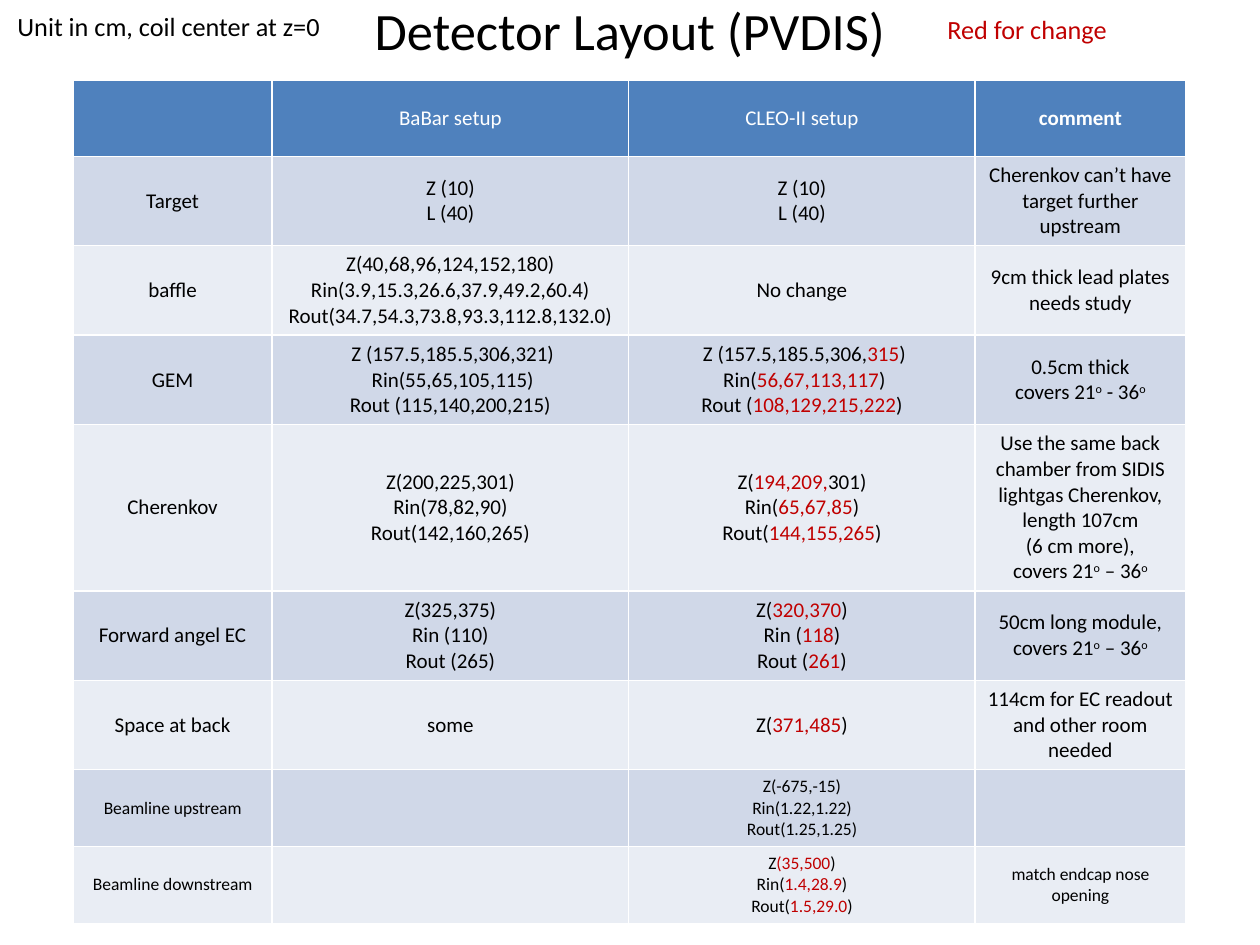
from pptx import Presentation
from pptx.dml.color import RGBColor
from pptx.enum.text import MSO_ANCHOR, PP_ALIGN
from pptx.util import Inches, Pt

FONT = "Calibri"
BLACK = RGBColor(0x00, 0x00, 0x00)
WHITE = RGBColor(0xFF, 0xFF, 0xFF)
RED = RGBColor(0xC0, 0x00, 0x00)
HEADER_FILL = RGBColor(0x4F, 0x81, 0xBD)
BAND_FILLS = (RGBColor(0xE9, 0xED, 0xF4), RGBColor(0xD0, 0xD8, 0xE8))

COLUMN_WIDTHS = (1.58, 2.83, 2.75, 1.67)
HEADER_HEIGHT, ROW_HEIGHT = 0.6, 0.66
CHERENKOV_HEIGHT, BEAMLINE_HEIGHT = 1.22, 0.61

# Text between asterisks is red, text between carets is superscript
HEADER = ("", "BaBar setup", "CLEO-II setup", "comment")
DETECTORS = [
    ("Target", "Z (10)\nL (40)", "Z (10)\nL (40)",
     "Cherenkov can’t have target further upstream"),
    ("baffle",
     "Z(40,68,96,124,152,180)\n"
     "Rin(3.9,15.3,26.6,37.9,49.2,60.4) Rout(34.7,54.3,73.8,93.3,112.8,132.0)",
     "No change", "9cm thick lead plates\nneeds study"),
    ("GEM",
     " Z (157.5,185.5,306,321)\n Rin(55,65,105,115)\nRout (115,140,200,215)",
     " Z (157.5,185.5,306,*315*)\n Rin(*56,67,113,117*)\nRout (*108,129,215,222*)",
     "0.5cm thick\ncovers 21^o^ - 36^o^"),
    ("Cherenkov", "Z(200,225,301)\nRin(78,82,90)\nRout(142,160,265)",
     "Z(*194,209,*301)\nRin(*65,67,85*)\nRout(*144,155,265*)",
     "Use the same back chamber from SIDIS lightgas Cherenkov,\n"
     "length 107cm\n(6 cm more),\ncovers 21^o^ – 36^o^"),
    ("Forward angel EC", "Z(325,375)\nRin (110)\nRout (265)",
     "Z(*320,370*)\nRin (*118*)\nRout (*261*)",
     "50cm long module, covers 21^o^ – 36^o^"),
    ("Space at back", "some", "Z(*371,485*)",
     "114cm for EC readout and other room needed"),
]
BEAMLINES = [
    ("Beamline upstream", "", "Z(-675,-15)\nRin(1.22,1.22)\nRout(1.25,1.25)", ""),
    ("Beamline downstream", "", "Z*(35,500*)\nRin(*1.4,28.9*)\nRout(*1.5,29.0*)",
     "match endcap nose opening"),
]


def format_font(font, size, color, bold=False):
    font.name = FONT
    font.size = Pt(size)
    font.bold = bold
    font.color.rgb = color


def add_marked_runs(paragraph, line, size, color):
    for i, part in enumerate(line.split("*")):
        for j, piece in enumerate(part.split("^")):
            if not piece:
                continue
            run = paragraph.add_run()
            run.text = piece
            format_font(run.font, size, RED if i % 2 else color)
            if j % 2:
                run.font._element.set("baseline", "30000")


def fill_cell(cell, text, size, color, fill):
    cell.fill.solid()
    cell.fill.fore_color.rgb = fill
    cell.vertical_anchor = MSO_ANCHOR.MIDDLE
    frame = cell.text_frame
    frame.text = "\n" * text.count("\n")
    for paragraph, line in zip(frame.paragraphs, text.split("\n")):
        paragraph.alignment = PP_ALIGN.CENTER
        paragraph.font.size = Pt(size)
        add_marked_runs(paragraph, line, size, color)


def add_detector_table(slide):
    rows = [HEADER] + DETECTORS + BEAMLINES
    heights = [HEADER_HEIGHT] + [
        CHERENKOV_HEIGHT if row[0] == "Cherenkov" else ROW_HEIGHT for row in DETECTORS
    ] + [BEAMLINE_HEIGHT] * len(BEAMLINES)
    # The default table style supplies the white cell borders
    table = slide.shapes.add_table(
        len(rows), len(COLUMN_WIDTHS), Inches(0.58), Inches(0.64),
        Inches(sum(COLUMN_WIDTHS)), Inches(sum(heights))).table
    for column, width in zip(table.columns, COLUMN_WIDTHS):
        column.width = Inches(width)
    for r, (values, height) in enumerate(zip(rows, heights)):
        table.rows[r].height = Inches(height)
        size = 10 if values in BEAMLINES else 12
        color = BLACK if r else WHITE
        fill = BAND_FILLS[r % 2] if r else HEADER_FILL
        for c, text in enumerate(values):
            fill_cell(table.cell(r, c), text, size, color, fill)
    comment_header = table.cell(0, len(HEADER) - 1)
    comment_header.text_frame.paragraphs[0].runs[0].font.bold = True


def place_title(slide, text):
    title = slide.shapes.title
    title.left, title.top = Inches(0.5), Inches(-0.39)
    title.width, title.height = Inches(9), Inches(1.25)
    frame = title.text_frame
    frame.text = text
    frame.vertical_anchor = MSO_ANCHOR.MIDDLE
    paragraph = frame.paragraphs[0]
    paragraph.alignment = PP_ALIGN.CENTER
    format_font(paragraph.runs[0].font, 30, BLACK)


def add_note(slide, text, left, top, width, color):
    box = slide.shapes.add_textbox(Inches(left), Inches(top), Inches(width), Inches(0.35))
    frame = box.text_frame
    frame.word_wrap = False
    frame.text = text
    format_font(frame.paragraphs[0].runs[0].font, 15, color)


def main():
    presentation = Presentation()
    presentation.slide_width, presentation.slide_height = Inches(10), Inches(7.5)
    slide = presentation.slides.add_slide(presentation.slide_layouts[5])

    # Table of detector positions
    add_detector_table(slide)

    # Title with a note on either side
    place_title(slide, "Detector Layout (PVDIS)")
    add_note(slide, "Unit in cm, coil center at z=0", 0.04, 0.03, 2.63, BLACK)
    add_note(slide, "Red for change", 7.42, 0.06, 1.48, RED)

    presentation.save("out.pptx")


if __name__ == "__main__":
    main()
